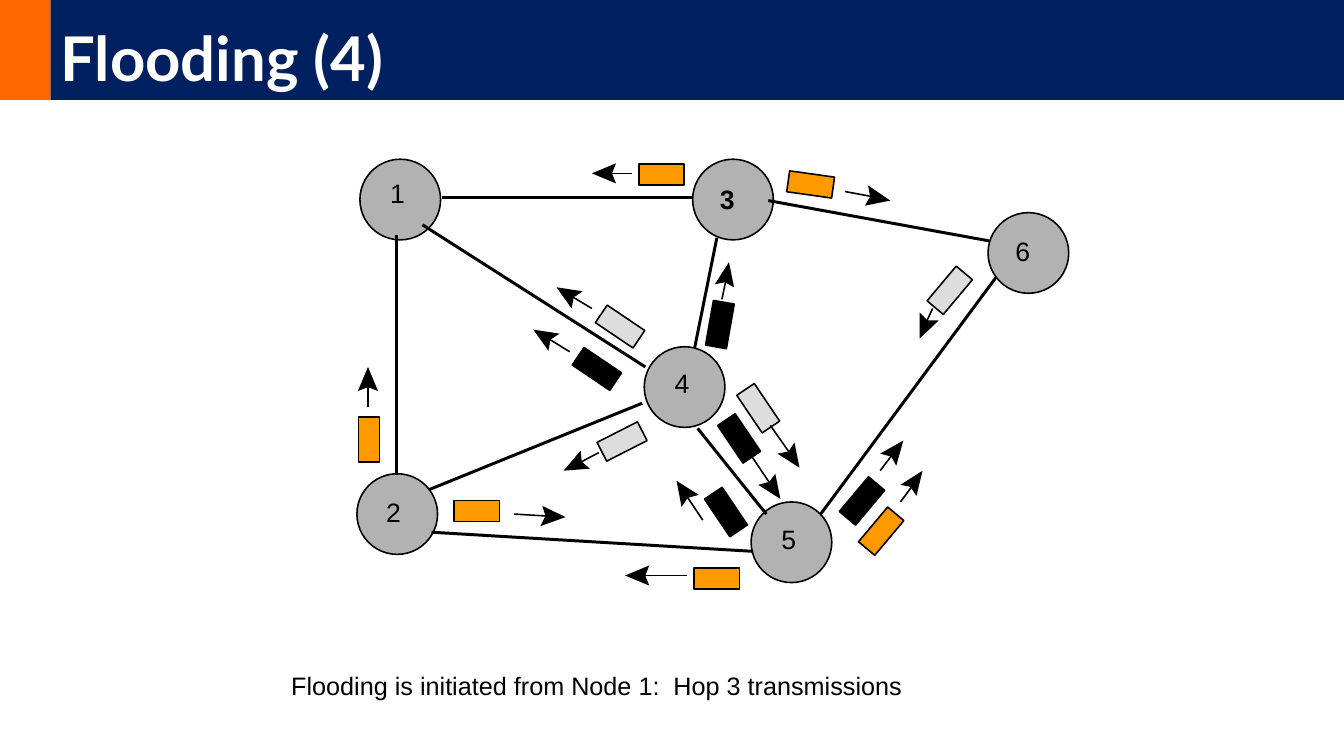
"""Draw the third hop of flooding in a six-node network."""
from dataclasses import dataclass
from math import hypot

from lxml import etree
from pptx import Presentation
from pptx import util as u
from pptx.dml.color import RGBColor
from pptx.enum import shapes, text
from pptx.oxml.ns import qn

PX = 9144
BLACK = RGBColor(0x00, 0x00, 0x00)
WHITE = RGBColor(0xFF, 0xFF, 0xFF)
NAVY = RGBColor(0x00, 0x20, 0x60)
FLAME = RGBColor(0xFF, 0x66, 0x00)
ORANGE = RGBColor(0xFF, 0x99, 0x00)
GREY = RGBColor(0xB2, 0xB2, 0xB2)
PALE = RGBColor(0xDD, 0xDD, 0xDD)

THIN, THICK = 1.13, 2.13
NODE = 80
LONG, SHORT = 45, 21
HEAD, NOTCH, STEM, HALF = 24, 20, 18, 10
BARE = dict(margin_left=0, margin_top=0, margin_right=0, margin_bottom=0,
            word_wrap=False)
LABEL = dict(name="Arial", size=u.Pt(19))
NOTE = dict(name="Arial", size=u.Pt(18))
TITLE = dict(name="Lato", size=u.Pt(44), bold=True)

Point = tuple[int, int]


@dataclass
class Node:
    """A network node with its corner and its label's corner."""
    name: str
    at: Point
    label: Point
    bold: bool = False


@dataclass
class Packet:
    """A packet with its centre, turn and direction arrow."""
    fill: RGBColor
    mid: Point
    turn: int
    start: Point
    tip: Point


NODES = [
    Node("1", (357, 158), (387, 176)),
    Node("2", (354, 470), (383, 492)),
    Node("3", (687, 158), (714, 181), True),
    Node("4", (639, 344), (669, 364)),
    Node("5", (745, 498), (775, 519)),
    Node("6", (980, 211), (1007, 233)),
]
LINKS: list[tuple[Point, Point]] = [
    ((438, 196), (686, 196)),
    ((711, 236), (689, 345)),
    ((692, 425), (760, 510)),
    ((762, 199), (981, 239)),
    ((814, 510), (988, 275)),
    ((747, 547), (428, 528)),
    ((393, 233), (393, 471)),
    ((419, 223), (640, 364)),
    ((637, 400), (425, 486)),
]
PACKETS = [
    Packet(ORANGE, (656, 173), 0, (627, 172), (587, 172)),
    Packet(ORANGE, (804, 183), 8, (838, 190), (883, 199)),
    Packet(ORANGE, (366, 436), 90, (365, 404), (365, 364)),
    Packet(BLACK, (592, 366), 34, (565, 349), (529, 327)),
    Packet(BLACK, (714, 322), 100, (716, 297), (723, 260)),
    Packet(BLACK, (720, 508), 56, (697, 516), (671, 477)),
    Packet(BLACK, (855, 497), -50, (873, 467), (896, 437)),
    Packet(BLACK, (733, 435), 56, (745, 452), (774, 495)),
    Packet(ORANGE, (874, 527), -50, (893, 498), (915, 467)),
    Packet(ORANGE, (711, 574), 0, (681, 571), (620, 571)),
    Packet(ORANGE, (473, 507), 0, (510, 510), (561, 513)),
    Packet(PALE, (617, 438), -27, (594, 449), (559, 467)),
    Packet(PALE, (615, 324), 34, (587, 306), (552, 285)),
    Packet(PALE, (752, 405), 56, (764, 422), (793, 464)),
    Packet(PALE, (942, 288), -50, (925, 306), (912, 336)),
]


def px(*sides: float) -> list[int]:
    """Turn px into EMU."""
    return [round(side * PX) for side in sides]


def style(item, form: dict) -> None:
    """Set each format value on an object."""
    for key, val in form.items():
        setattr(item, key, val)


def paint(shape, fill: RGBColor, edge: bool = False) -> None:
    """Fill a shape and give it a black edge or none."""
    shape.shadow.inherit = False
    shape.fill.solid()
    shape.fill.fore_color.rgb = fill
    if edge:
        shape.line.color.rgb = BLACK
        shape.line.width = u.Pt(THIN)
    else:
        shape.line.fill.background()


def write(shape, words: str, form: dict, ink: RGBColor = BLACK):
    """Write one formatted run and return its paragraph."""
    para = shape.text_frame.paragraphs[0]
    run = para.add_run()
    run.text = words
    style(run.font, form)
    run.font.color.rgb = ink
    return para


def join(tree, start: Point, end: Point, width: float) -> None:
    """Draw a straight black line."""
    line = tree.add_connector(shapes.MSO_CONNECTOR.STRAIGHT,
                              *px(*start, *end))
    line.line.color.rgb = BLACK
    line.line.width = u.Pt(width)
    etree.SubElement(line._element.spPr, qn("a:effectLst"))


def arrow(tree, start: Point, tip: Point) -> None:
    """Draw a thin line with a large notched head."""
    run, rise = tip[0] - start[0], tip[1] - start[1]
    size = hypot(run, rise)
    dx, dy = run / size, rise / size

    def spot(back: float, side: float = 0) -> Point:
        """Find a point behind the tip and off the axis."""
        return (round(tip[0] - back * dx - side * dy),
                round(tip[1] - back * dy + side * dx))

    join(tree, start, spot(STEM), THIN)
    form = tree.build_freeform(*tip, scale=PX)
    form.add_line_segments([spot(HEAD, HALF), spot(NOTCH), spot(HEAD, -HALF)])
    paint(form.convert_to_shape(), BLACK)


def draw_node(tree, node: Node) -> None:
    """Draw the circle of a node."""
    disc = tree.add_shape(shapes.MSO_SHAPE.OVAL, *px(*node.at, NODE, NODE))
    paint(disc, GREY, True)


def draw_label(tree, node: Node) -> None:
    """Write the number of a node."""
    box = tree.add_textbox(*px(*node.label, 15, 32))
    style(box.text_frame, BARE)
    write(box, node.name, LABEL | dict(bold=node.bold))


def draw_packet(tree, pack: Packet) -> None:
    """Draw a turned packet and its arrow."""
    left, top = pack.mid[0] - LONG / 2, pack.mid[1] - SHORT / 2
    box = tree.add_shape(shapes.MSO_SHAPE.RECTANGLE,
                         *px(left, top, LONG, SHORT))
    box.rotation = pack.turn
    paint(box, pack.fill, True)
    arrow(tree, pack.start, pack.tip)


def head(tree) -> None:
    """Draw the title bar and its side block."""
    block = tree.add_shape(shapes.MSO_SHAPE.RECTANGLE, *px(0, 0, 50, 99))
    paint(block, FLAME)
    bar = tree.title
    place = dict(zip(("left", "top", "width", "height"), px(50, 0, 1283, 99)))
    style(bar, place)
    bar.fill.solid()
    bar.fill.fore_color.rgb = NAVY
    style(bar.text_frame, dict(vertical_anchor=text.MSO_ANCHOR.BOTTOM,
                               auto_size=text.MSO_AUTO_SIZE.NONE))
    para = write(bar, "Flooding (4)", TITLE, WHITE)
    style(para, dict(alignment=text.PP_ALIGN.LEFT, line_spacing=0.9))


def main() -> None:
    """Build and save the slide."""
    deck = Presentation()
    style(deck, dict(slide_width=px(1333)[0], slide_height=px(750)[0]))
    tree = deck.slides.add_slide(deck.slide_layouts[5]).shapes
    head(tree)
    for node in NODES:
        draw_node(tree, node)
    for start, end in LINKS:
        join(tree, start, end, THICK)
    for node in NODES:
        draw_label(tree, node)
    for pack in PACKETS:
        draw_packet(tree, pack)
    note = tree.add_textbox(*px(279, 660, 671, 40))
    note.text_frame.word_wrap = True
    write(note, "Flooding is initiated from Node 1:  Hop 3 transmissions", NOTE)
    deck.save("out.pptx")


if __name__ == "__main__":
    main()
